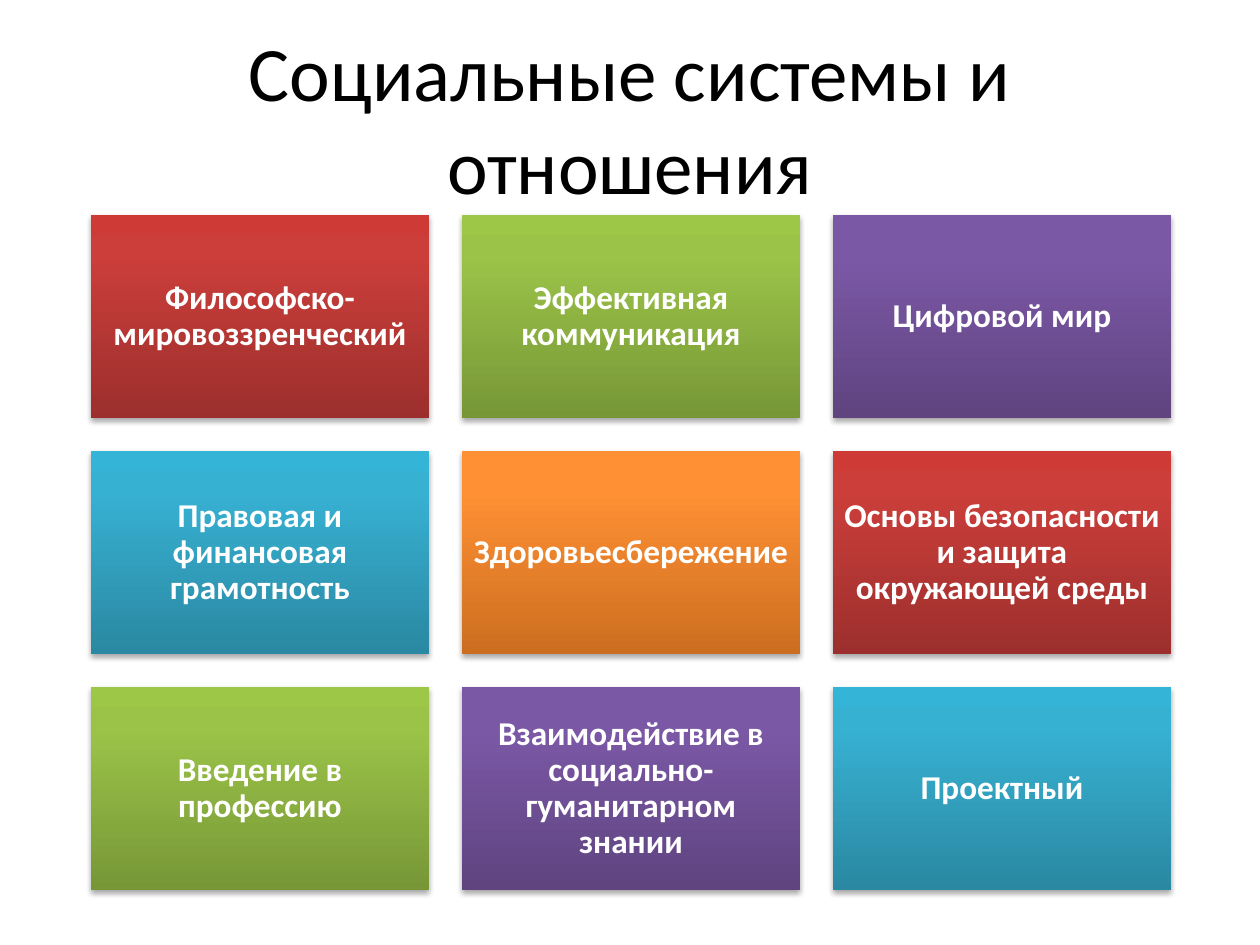
from lxml import etree
from pptx import Presentation
from pptx.dml.color import RGBColor
from pptx.enum.shapes import MSO_SHAPE
from pptx.enum.text import MSO_ANCHOR, PP_ALIGN
from pptx.oxml import parse_xml
from pptx.oxml.ns import nsdecls, qn
from pptx.util import Emu, Pt

RECTANGLE = MSO_SHAPE.RECTANGLE
CENTER = PP_ALIGN.CENTER
MIDDLE = MSO_ANCHOR.MIDDLE

PX = 914400 / 126
FONT = "Calibri"
COLORS = {"title": "000000", "label": "FFFFFF", "shadow": "000000"}

# Gradient colours from the bottom edge to the top edge
GRADIENTS = {
    "red": ("9C2F2D", "CB3E3A", "CE3B37"),
    "green": ("779737", "9BC348", "9DC746"),
    "purple": ("5F4480", "7B58A6", "7C57A8"),
    "blue": ("2A88A2", "37B1D2", "34B4D6"),
    "orange": ("CC6E20", "FF9034", "FF9136"),
}
STOPS = (0, 80, 100)

TILES = [
    ("Философско-мировоззренческий", "red"),
    ("Эффективная коммуникация", "green"),
    ("Цифровой мир", "purple"),
    ("Правовая и финансовая грамотность", "blue"),
    ("Здоровьесбережение", "orange"),
    ("Основы безопасности и защита окружающей среды", "red"),
    ("Введение в профессию", "green"),
    ("Взаимодействие в социально-гуманитарном знании", "purple"),
    ("Проектный", "blue"),
]
COLUMNS = 3
GRID_LEFT, GRID_TOP = 91, 215
TILE_WIDTH, TILE_HEIGHT = 338, 203
GAP = 33


def px(value):
    return Emu(round(value * PX))


class SlideBuilder:
    def __init__(self, page):
        self.page = page

    def set_text(self, box, text, size, color, bold=False, inset=None, spacing=None):
        frame = box.text_frame
        frame.word_wrap = True
        frame.vertical_anchor = MIDDLE
        if inset is not None:
            frame.margin_left = frame.margin_right = px(inset)
            frame.margin_top = frame.margin_bottom = px(inset)
        para = frame.paragraphs[0]
        para.text = text
        para.alignment = CENTER
        para.line_spacing = spacing
        para.font.name = FONT
        para.font.size = Pt(size)
        para.font.bold = bold
        para.font.color.rgb = RGBColor.from_string(COLORS[color])

    def title(self, left, top, width, height, text):
        box = self.page.shapes.add_textbox(px(left), px(top), px(width), px(height))
        self.set_text(box, text, 44, "title")

    def tile(self, left, top, text, gradient):
        box = self.page.shapes.add_shape(
            RECTANGLE, px(left), px(top), px(TILE_WIDTH), px(TILE_HEIGHT))
        box.line.fill.background()
        box.shadow.inherit = False
        self.paint(box, GRADIENTS[gradient])
        self.set_text(box, text, 19, "label", bold=True, inset=10, spacing=0.9)

    def paint(self, box, colors):
        properties = box._element.spPr

        # Three-stop vertical gradient
        stops = "".join(
            f'<a:gs pos="{stop * 1000}"><a:srgbClr val="{color}"/></a:gs>'
            for stop, color in zip(STOPS, colors))
        properties.find(qn("a:ln")).addprevious(parse_xml(
            f'<a:gradFill {nsdecls("a")} rotWithShape="1"><a:gsLst>{stops}</a:gsLst>'
            '<a:lin ang="16200000" scaled="0"/></a:gradFill>'))

        # Soft shadow below the tile
        shadow = etree.SubElement(
            properties.find(qn("a:effectLst")), qn("a:outerShdw"),
            blurRad="40000", dist="23000", dir="5400000", rotWithShape="0")
        color = etree.SubElement(shadow, qn("a:srgbClr"), val=COLORS["shadow"])
        etree.SubElement(color, qn("a:alpha"), val="35000")


def main():
    deck = Presentation()
    deck.slide_width, deck.slide_height = px(1260), px(945)
    builder = SlideBuilder(deck.slides.add_slide(deck.slide_layouts[6]))

    # Heading
    builder.title(63, 38, 1134, 158, "Социальные системы и отношения")

    # Grid of modules
    for index, (text, gradient) in enumerate(TILES):
        row, column = divmod(index, COLUMNS)
        builder.tile(GRID_LEFT + column * (TILE_WIDTH + GAP),
                     GRID_TOP + row * (TILE_HEIGHT + GAP), text, gradient)

    deck.save("out.pptx")


if __name__ == "__main__":
    main()
